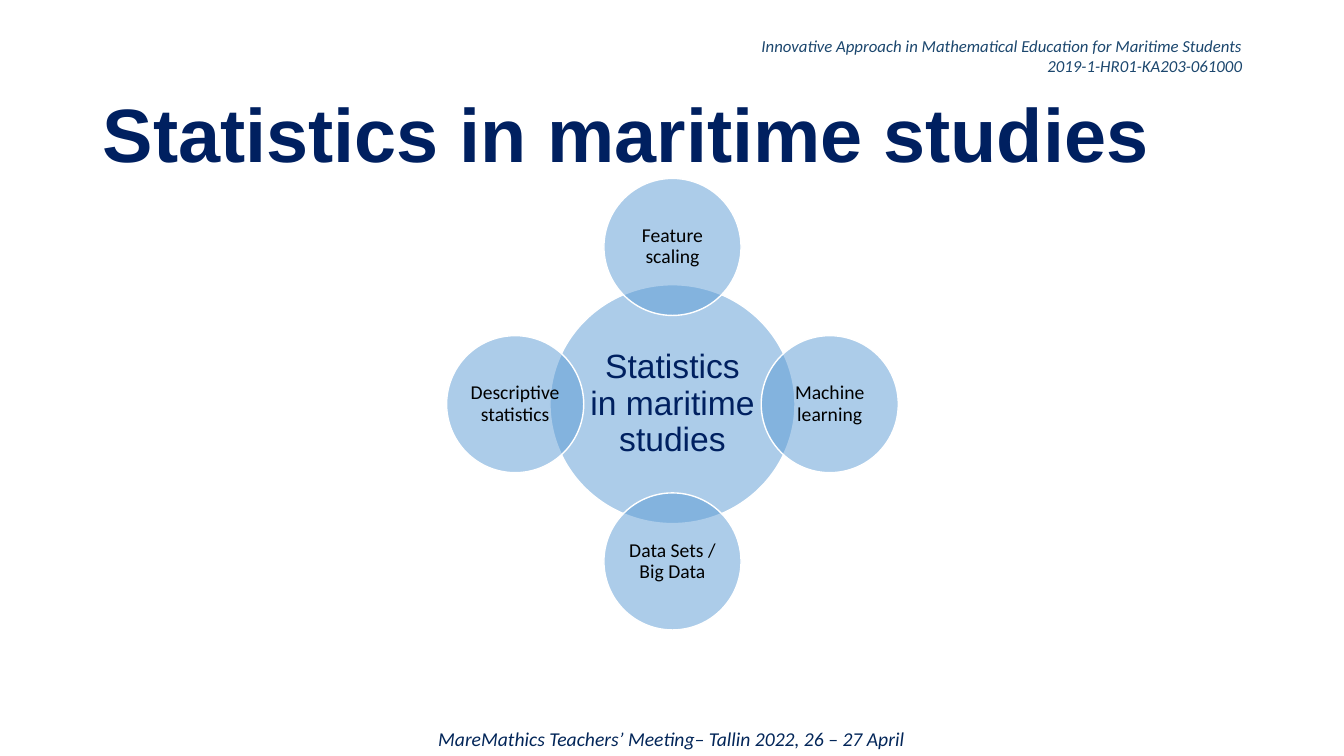
from pptx import Presentation
from pptx.dml.color import RGBColor
from pptx.enum.shapes import MSO_SHAPE
from pptx.enum.text import MSO_ANCHOR as ANCHOR, PP_ALIGN as ALIGN
from pptx.oxml.ns import qn
from pptx.util import Inches, Pt
from lxml import etree

NAVY = RGBColor(0x00, 0x20, 0x60)
HEADER = RGBColor(0x1C, 0x47, 0x6E)
FOOTER = RGBColor(0x03, 0x26, 0x59)
BLUE = RGBColor(0x5B, 0x9B, 0xD5)
WHITE = RGBColor(0xFF, 0xFF, 0xFF)
BLACK = RGBColor(0x00, 0x00, 0x00)

prs = Presentation()
prs.slide_width, prs.slide_height = Inches(13.33), Inches(7.5)
s = prs.slides.add_slide(prs.slide_layouts[6])


def write(sp, text, size, font, color, align, anchor, spacing=1.0, bold=False, italic=False):
    tf = sp.text_frame
    tf.word_wrap = True
    tf.vertical_anchor = anchor
    tf.text = text
    for p in tf.paragraphs:
        p.alignment = align
        p.line_spacing = spacing
        for r in p.runs:
            r.font.size = Pt(size)
            r.font.name = font
            r.font.color.rgb = color
            r.font.bold = bold
            r.font.italic = italic


def circle(cx, cy, width, height, inset, text, size, font, color):
    sp = s.shapes.add_shape(MSO_SHAPE.OVAL, Inches(cx - width / 2), Inches(cy - height / 2),
                            Inches(width), Inches(height))
    sp.shadow.inherit = False
    sp.fill.solid()
    sp.fill.fore_color.rgb = BLUE
    fill_color = sp.fill._xPr.find(qn("a:solidFill"))[0]
    etree.SubElement(fill_color, qn("a:alpha"), val="50000")
    sp.line.color.rgb = WHITE
    sp.line.width = Pt(1)
    tf = sp.text_frame
    tf.margin_left = tf.margin_right = tf.margin_top = tf.margin_bottom = Inches(inset)
    write(sp, text, size, font, color, ALIGN.CENTER, ANCHOR.MIDDLE, 0.9)


LEFT, WIDTH = Inches(0.92), Inches(11.5)

header = s.shapes.add_textbox(LEFT, Inches(0.3), WIDTH, Inches(0.5))
write(header, "Innovative Approach in Mathematical Education for Maritime Students\n"
      "2019-1-HR01-KA203-061000", 12, "Calibri", HEADER, ALIGN.RIGHT, ANCHOR.MIDDLE, italic=True)

footer = s.shapes.add_textbox(LEFT, Inches(7.16), Inches(11.48), Inches(0.34))
write(footer, "MareMathics Teachers’ Meeting– Tallin 2022, 26 – 27 April",
      14, "Calibri", FOOTER, ALIGN.CENTER, ANCHOR.TOP, italic=True)

CX, CY, ORBIT = 6.67, 4.01, 1.56
circle(CX, CY, 2.43, 2.37, 0.03, "Statistics in maritime studies", 24, "Arial", NAVY)

topics = [
    ("Feature scaling", 0, -1),
    ("Machine learning", 1, 0),
    ("Data Sets / Big Data", 0, 1),
    ("Descriptive statistics", -1, 0),
]
for topic, dx, dy in topics:
    circle(CX + dx * ORBIT, CY + dy * ORBIT, 1.36, 1.36, 0.02, topic, 14, "Calibri", BLACK)

title = s.shapes.add_textbox(LEFT, Inches(0.92), WIDTH, Inches(0.93))
write(title, "Statistics in maritime studies", 54, "Arial", NAVY, ALIGN.LEFT, ANCHOR.TOP, 0.9, bold=True)

prs.save("out.pptx")
